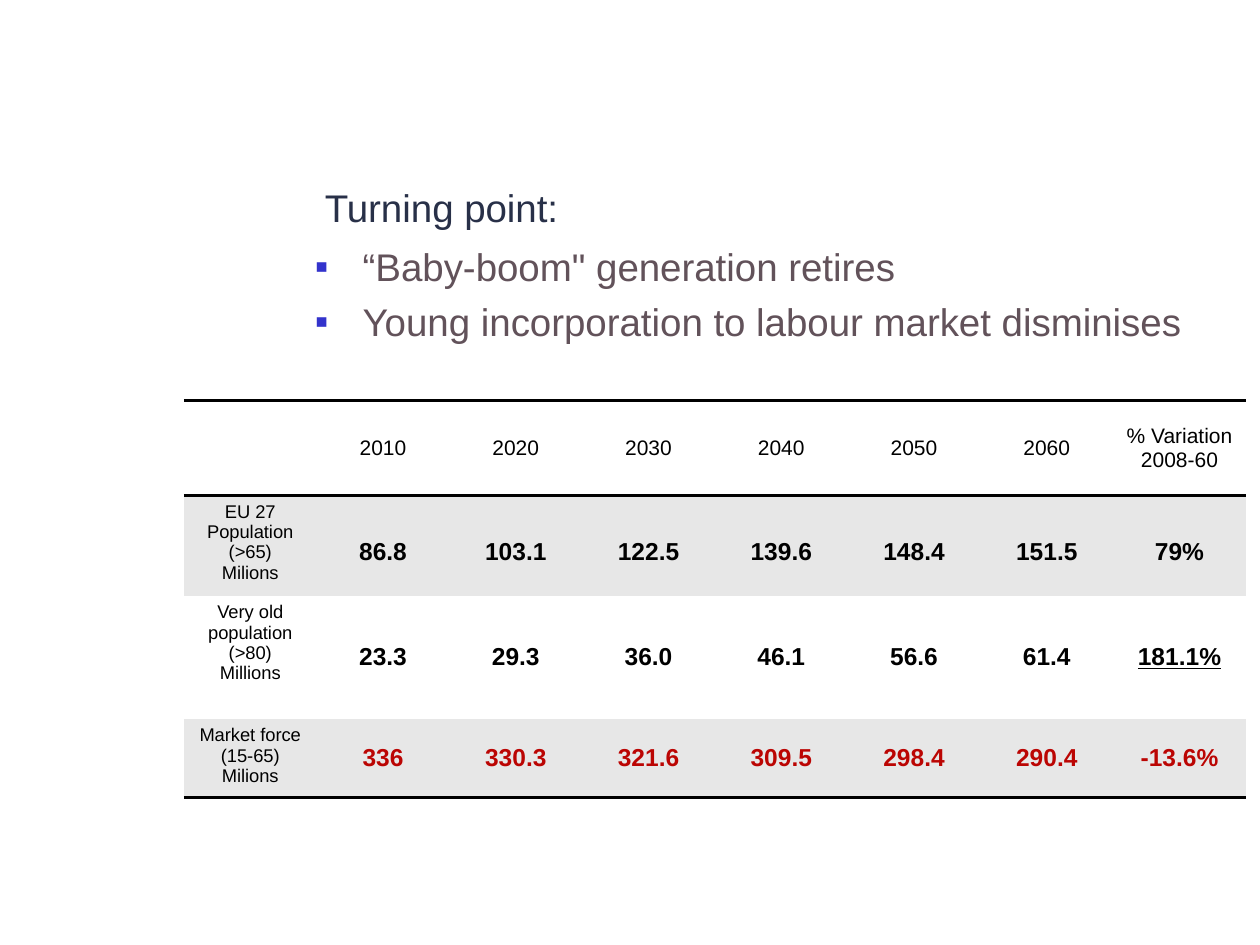
from dataclasses import dataclass

from lxml import etree
from pptx import Presentation, util as u
from pptx.dml.color import RGBColor
from pptx.enum import text as t
from pptx.oxml import parse_xml
from pptx.oxml.ns import qn

WIDE, HIGH = 10, 7.5
NS = "http://schemas.openxmlformats.org/drawingml/2006/main"
PLAIN = "{2D5ABB26-0587-4C30-8999-92F81FD0307C}"  # table style without grid
HUES = {"ink": "000000", "paper": "FFFFFF", "band": "E7E7E7", "red": "BB0503",
        "head": "283048", "body": "62525A", "mark": "3333CC"}

LEAD = {"size": 22, "hue": "head"}
POINT = {"size": 22, "hue": "body"}
YEAR = {"size": 12, "hue": "ink"}
LABEL = {"size": 10.5, "hue": "ink"}
VALUE = {"size": 14, "hue": "ink", "bold": True}
LOSS = {**VALUE, "hue": "red"}


@dataclass
class Box:
    """Place given as shares of the slide."""
    x: float
    y: float
    w: float
    h: float

    def place(self) -> list:
        sides = (self.x * WIDE, self.y * HIGH, self.w * WIDE, self.h * HIGH)
        return [u.Inches(side) for side in sides]


@dataclass
class Row:
    label: list
    cells: list
    form: dict
    fill: str
    high: float  # share of the slide's height
    edges: str = ""
    space: float = 1.0
    pad: float = 0.05


def color(name: str) -> RGBColor:
    return RGBColor.from_string(HUES[name])


def style(font, form: dict) -> None:
    font.name = "Arial"
    for key, val in form.items():
        if key == "hue":
            font.color.rgb = color(val)
        else:
            setattr(font, key, u.Pt(val) if key == "size" else val)


def write(frame, lines: list, form: dict, align=None, space=1.0,
          gap=0.0, mark="") -> None:
    for i, line in enumerate(lines):
        para = frame.paragraphs[0] if i == 0 else frame.add_paragraph()
        if mark:
            bullet(para, mark)
        para.text = line
        para.alignment = align
        para.line_spacing = space
        para.space_before = u.Pt(gap if i else 0)
        style(para.runs[0].font, form)


def bullet(para, mark: str) -> None:
    props = para._p.get_or_add_pPr()
    inset = u.Inches(0.38)
    props.set("marL", str(inset))
    props.set("indent", str(-inset))
    tint = etree.SubElement(props, qn("a:buClr"))
    etree.SubElement(tint, qn("a:srgbClr"), val=HUES["mark"])
    etree.SubElement(props, qn("a:buFont"), typeface="Arial")
    etree.SubElement(props, qn("a:buChar"), char=mark)


def note(slide, box: Box, lines: list, form: dict, **looks) -> None:
    frame = slide.shapes.add_textbox(*box.place()).text_frame
    frame.word_wrap = True
    write(frame, lines, form, **looks)


def rule(cell, edges: str) -> None:
    props = cell._tc.get_or_add_tcPr()
    for i, edge in enumerate(edges):
        props.insert(i, parse_xml(
            f'<a:ln{edge} xmlns:a="{NS}" w="{u.Pt(2)}"><a:solidFill>'
            f'<a:srgbClr val="{HUES["ink"]}"/></a:solidFill></a:ln{edge}>'))


def grid(slide, box: Box, rows: list) -> None:
    count = 1 + len(rows[0].cells)
    table = slide.shapes.add_table(len(rows), count, *box.place()).table
    table.first_row = table.horz_banding = False
    table._tbl.tblPr.find(qn("a:tableStyleId")).text = PLAIN
    for col in table.columns:
        col.width = u.Inches(box.w * WIDE / count)
    for r, row in enumerate(rows):
        table.rows[r].height = u.Inches(row.high * HIGH)
        for c, lines in enumerate([row.label] + row.cells):
            cell = table.cell(r, c)
            cell.fill.solid()
            cell.fill.fore_color.rgb = color(row.fill)
            rule(cell, row.edges)
            form, space = (row.form, row.space) if c else (LABEL, 1.0)
            if c:
                cell.vertical_anchor = t.MSO_ANCHOR.MIDDLE
                cell.margin_left = cell.margin_right = u.Inches(0.07)
                cell.margin_top = cell.margin_bottom = u.Inches(row.pad)
            if isinstance(lines, str):
                lines = [lines]
            write(cell.text_frame, lines, form, t.PP_ALIGN.CENTER, space)
    # The steepest rise is underlined
    table.cell(2, count - 1).text_frame.paragraphs[0].runs[0].font.underline = True


ROWS = [
    Row([], ["2010", "2020", "2030", "2040", "2050", "2060",
             ["% Variation", "2008-60"]], YEAR, "paper", 0.1, "TB", pad=0),
    Row(["EU 27", "Population", "(>65)", "Milions"],
        ["86.8", "103.1", "122.5", "139.6", "148.4", "151.5", "79%"],
        VALUE, "band", 0.1, space=1.5, pad=0),
    Row(["Very old population", "(>80)", "Millions"],
        ["23.3", "29.3", "36.0", "46.1", "56.6", "61.4", "181.1%"],
        VALUE, "paper", 0.13),
    Row(["Market force", "(15-65)", "Milions"],
        ["336", "330.3", "321.6", "309.5", "298.4", "290.4", "-13.6%"],
        LOSS, "band", 0.08, "B"),
]


def main() -> None:
    deck = Presentation()
    deck.slide_width, deck.slide_height = u.Inches(WIDE), u.Inches(HIGH)
    slide = deck.slides.add_slide(deck.slide_layouts[6])

    # Points and their heading
    note(slide, Box(2.4 / WIDE, 1.88 / HIGH, 7.32 / WIDE, 1.02 / HIGH),
         ["“Baby-boom\" generation retires",
          "Young incorporation to labour market disminises"],
         POINT, gap=5, mark="▪")
    note(slide, Box(2.48 / WIDE, 1.23 / HIGH, 6.46 / WIDE, 0.71 / HIGH),
         ["Turning point:"], LEAD, space=1.5)

    # Population table
    high = sum(row.high for row in ROWS)
    grid(slide, Box(1.46 / WIDE, 3.18 / HIGH, 8.43 / WIDE, high), ROWS)

    deck.save("out.pptx")


if __name__ == "__main__":
    main()
